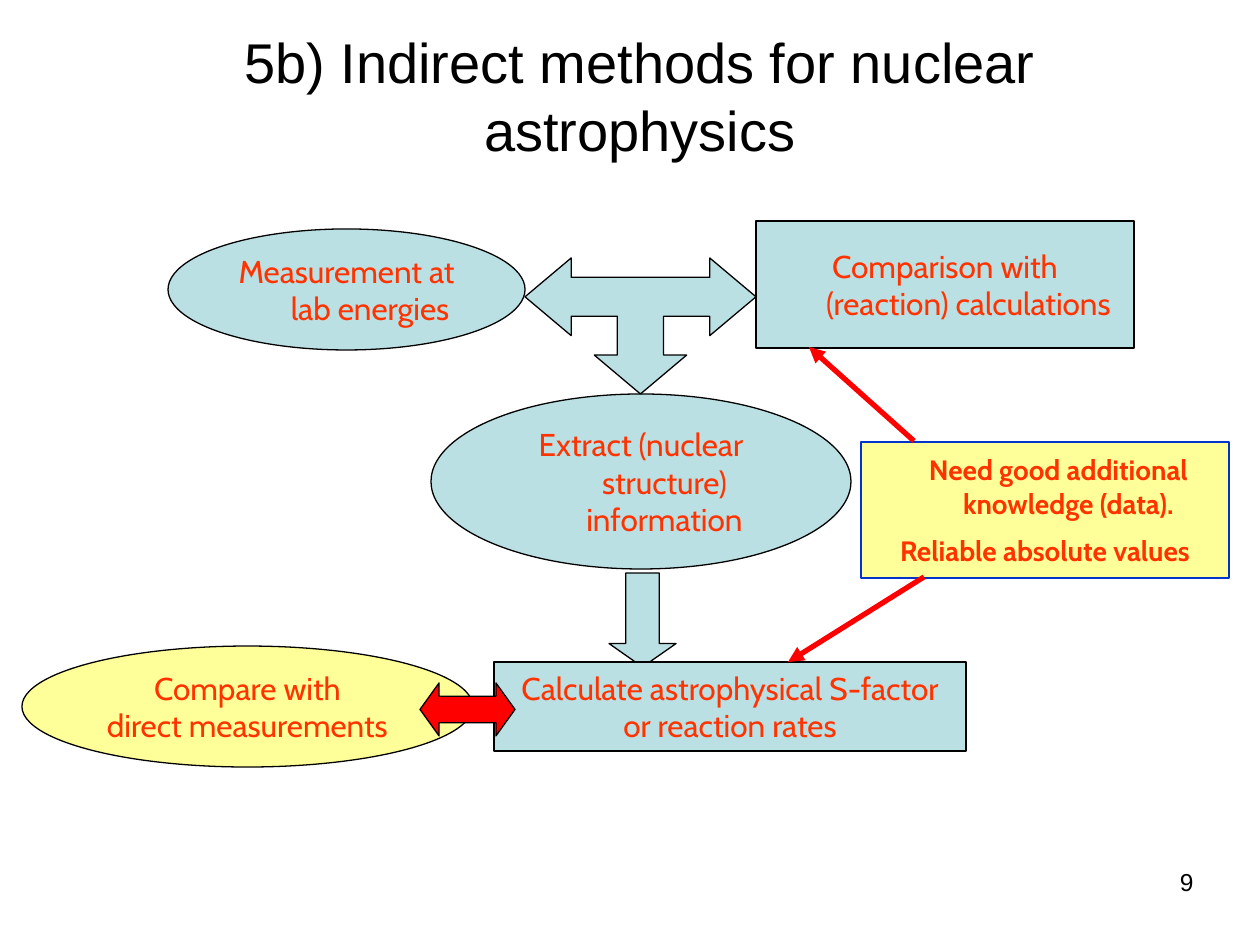
import pptx
import pptx.util
import pptx.dml.color
import pptx.enum.shapes
import pptx.enum.text
import pptx.oxml.ns
import lxml.etree

RGBColor = pptx.dml.color.RGBColor
SHAPE = pptx.enum.shapes.MSO_SHAPE
ALIGN = pptx.enum.text.PP_ALIGN
ANCHOR = pptx.enum.text.MSO_ANCHOR
qn = pptx.oxml.ns.qn

BLACK = RGBColor(0x00, 0x00, 0x00)
RED = RGBColor(0xFF, 0x00, 0x00)
ORANGE = RGBColor(0xFF, 0x33, 0x00)
PALE_BLUE = RGBColor(0xBB, 0xE0, 0xE3)
YELLOW = RGBColor(0xFF, 0xFF, 0x99)
BLUE = RGBColor(0x00, 0x33, 0xCC)

PX = 914400 / 126
HANGING = 47


def px(n):
    return pptx.util.Emu(round(n * PX))


def paint(sp, fill, line=BLACK, width=0.75):
    sp.shadow.inherit = False
    sp.fill.solid()
    sp.fill.fore_color.rgb = fill
    sp.line.color.rgb = line
    sp.line.width = pptx.util.Pt(width)


def add_run(p, text, font, size, color, bold=False):
    r = p.add_run()
    r.text = text
    r.font.name = font
    r.font.size = pptx.util.Pt(size)
    r.font.color.rgb = color
    r.font.bold = bold


def add_shape(slide, kind, box, fill, line=BLACK, width=0.75):
    sp = slide.shapes.add_shape(kind, *map(px, box))
    paint(sp, fill, line, width)
    return sp


def write_lines(sp, lines, size=18, bold=False, gap=0, first_indent=HANGING):
    """Fill a shape with centred paragraphs that have a hanging indent."""
    tf = sp.text_frame
    tf.word_wrap = True
    tf.vertical_anchor = ANCHOR.MIDDLE
    for i, text in enumerate(lines):
        p = tf.add_paragraph() if i else tf.paragraphs[0]
        p.alignment = ALIGN.CENTER
        if i and gap:
            p.space_before = pptx.util.Pt(gap)
        pPr = p._p.get_or_add_pPr()
        pPr.set("marL", str(px(HANGING)))
        pPr.set("indent", str(-px(HANGING if i else first_indent)))
        add_run(p, text, "Cabin", size, ORANGE, bold)


def add_block_arrow(slide, kind, box, fill, adjustments):
    sp = add_shape(slide, kind, box, fill)
    for i, value in enumerate(adjustments):
        sp.adjustments[i] = value


def add_three_way_arrow(slide, box):
    """Arrow to left, right and down, drawn on a 10 by 7 grid."""
    left, top, width, height = box
    right_half = [(6, 5), (6, 3), (8, 3), (8, 4), (10, 2), (8, 0), (8, 1)]
    right_half.insert(0, (7, 5))
    left_half = [(10 - x, y) for x, y in reversed(right_half)]
    builder = slide.shapes.build_freeform(
        5, 7, scale=(width * PX / 10, height * PX / 7))
    builder.add_line_segments(right_half + left_half, close=True)
    paint(builder.convert_to_shape(px(left), px(top)), PALE_BLUE)


def add_pointer(slide, start, end):
    line = slide.shapes.add_connector(
        pptx.enum.shapes.MSO_CONNECTOR.STRAIGHT, *map(px, start + end))
    line.line.color.rgb = RED
    line.line.width = pptx.util.Pt(3)
    ln = line.line._get_or_add_ln()
    lxml.etree.SubElement(ln, qn("a:tailEnd"), type="triangle")
    lxml.etree.SubElement(line._element.spPr, qn("a:effectLst"))


def add_title(slide, box, text):
    title = slide.shapes.title
    title.left, title.top, title.width, title.height = map(px, box)
    tf = title.text_frame
    tf.auto_size = pptx.enum.text.MSO_AUTO_SIZE.NONE
    tf.vertical_anchor = ANCHOR.MIDDLE
    p = tf.paragraphs[0]
    p.alignment = ALIGN.CENTER
    add_run(p, text, "Arial", 32, BLACK)


def add_page_number(slide, box, text):
    tf = slide.shapes.add_textbox(*map(px, box)).text_frame
    tf.word_wrap = True
    p = tf.paragraphs[0]
    p.alignment = ALIGN.RIGHT
    add_run(p, text, "Arial", 14, BLACK)


def add_flow(slide):
    note = add_shape(slide, SHAPE.RECTANGLE, (861, 442, 368, 136), YELLOW, BLUE, 1.5)
    write_lines(note, ["Need good additional knowledge (data).",
                       "Reliable absolute values"],
                size=16, bold=True, gap=8, first_indent=20)

    steps = [
        (SHAPE.OVAL, (168, 229, 357, 121), ["Measurement at lab energies"]),
        (SHAPE.FLOWCHART_PROCESS, (756, 221, 378, 127),
         ["Comparison with (reaction) calculations"]),
        (SHAPE.OVAL, (431, 394, 420, 175),
         ["Extract (nuclear structure) information"]),
    ]
    for kind, box, lines in steps:
        write_lines(add_shape(slide, kind, box, PALE_BLUE), lines)

    add_three_way_arrow(slide, (525, 258, 231, 136))
    add_block_arrow(slide, SHAPE.DOWN_ARROW, (609, 573, 67, 94), PALE_BLUE, (0.5, 0.35))

    result = add_shape(slide, SHAPE.RECTANGLE, (494, 662, 472, 89), PALE_BLUE)
    write_lines(result, ["Calculate astrophysical S-factor", "or reaction rates"])

    add_pointer(slide, (924, 577), (788, 662))
    add_pointer(slide, (914, 441), (809, 347))

    check = add_shape(slide, SHAPE.OVAL, (22, 646, 451, 121), YELLOW)
    write_lines(check, ["Compare with", "direct measurements"])
    add_block_arrow(slide, SHAPE.LEFT_RIGHT_ARROW, (420, 683, 95, 53), RED, (0.5, 0.36))


def main():
    prs = pptx.Presentation()
    prs.slide_width, prs.slide_height = px(1260), px(945)
    slide = prs.slides.add_slide(prs.slide_layouts[5])
    add_title(slide, (136, 32, 1008, 126),
              "5b) Indirect methods for nuclear astrophysics")
    add_flow(slide)
    add_page_number(slide, (1133, 861, 73, 84), "9")
    prs.save("out.pptx")


if __name__ == "__main__":
    main()
